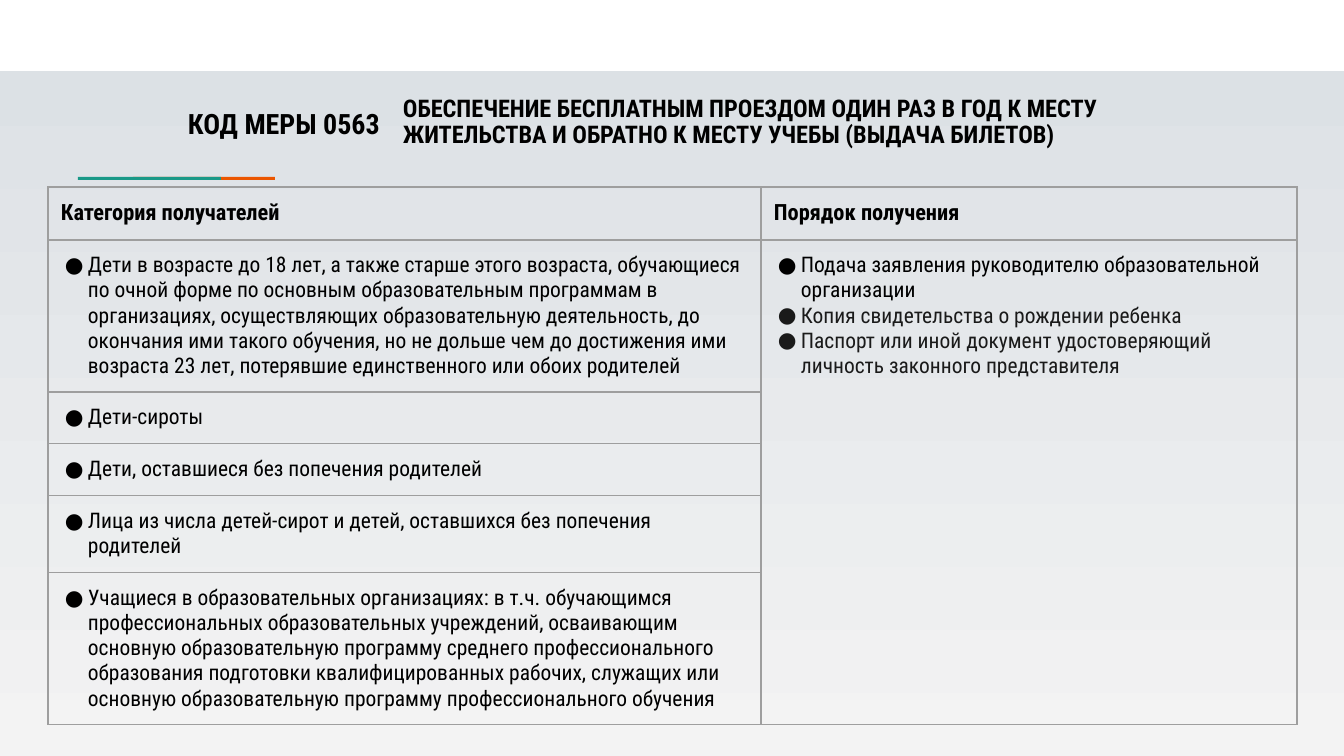
"""Builds a slide on free travel for students: who is entitled and how to apply."""
import pptx
import pptx.dml.color
import pptx.enum.shapes
import pptx.enum.text
import pptx.oxml.ns
import pptx.util
from lxml import etree

TITLE = ("ОБЕСПЕЧЕНИЕ БЕСПЛАТНЫМ ПРОЕЗДОМ ОДИН РАЗ В ГОД К МЕСТУ ЖИТЕЛЬСТВА "
         "И ОБРАТНО К МЕСТУ УЧЕБЫ (ВЫДАЧА БИЛЕТОВ)")
CODE = "КОД МЕРЫ 0563"
HEADERS = ["Категория получателей", "Порядок получения"]
RECIPIENTS = [
    "Дети в возрасте до 18 лет, а также старше этого возраста, обучающиеся по очной форме "
    "по основным образовательным программам в организациях, осуществляющих образовательную "
    "деятельность, до окончания ими такого обучения, но не дольше чем до достижения ими "
    "возраста 23 лет, потерявшие единственного или обоих родителей",
    "Дети-сироты",
    "Дети, оставшиеся без попечения родителей",
    "Лица из числа детей-сирот и детей, оставшихся без попечения родителей",
    "Учащиеся в образовательных организациях: в т.ч. обучающимся профессиональных "
    "образовательных учреждений, осваивающим основную образовательную программу среднего "
    "профессионального образования подготовки квалифицированных рабочих, служащих или "
    "основную образовательную программу профессионального обучения",
]
STEPS = [
    ("Подача заявления руководителю образовательной организации", "black"),
    ("Копия свидетельства о рождении ребенка", "ink"),
    ("Паспорт или иной документ удостоверяющий личность законного представителя", "ink"),
]
COLORS = {"black": "000000", "ink": "1A1A1A", "white": "FFFFFF", "border": "9E9E9E",
          "orange": "EB5600", "teal": "1A9988", "sky": "DADFE4", "mist": "F3F3F3"}
FONT = "Roboto Condensed"
BLOCKS = [((0, 0, 1344, 71), "white"),
          ((133, 177, 142, 3), "orange"),
          ((78, 177, 143, 3), "teal")]
COLUMNS = [713, 536]
ROWS = [53, 152, 52, 52, 77, 152]


def px(length):
    return pptx.util.Emu(round(length * 914400 / 134.4))


def rgb(name):
    return pptx.dml.color.RGBColor.from_string(COLORS[name])


def add_xml(parent, tag, **attributes):
    return etree.SubElement(parent, pptx.oxml.ns.qn(tag), attributes)


def write(paragraph, text, size, bold=False, color="black"):
    paragraph.add_run().text = text
    font = paragraph.font
    font.name, font.size, font.bold = FONT, pptx.util.Pt(size), bold
    font.color.rgb = rgb(color)


def place(shape, left, top, width, height):
    shape.left, shape.top, shape.width, shape.height = map(px, (left, top, width, height))


def set_frame(frame, side, edge):
    frame.word_wrap = True
    frame.auto_size = pptx.enum.text.MSO_AUTO_SIZE.NONE
    frame.vertical_anchor = pptx.enum.text.MSO_ANCHOR.MIDDLE
    frame.margin_left = frame.margin_right = px(side)
    frame.margin_top = frame.margin_bottom = px(edge)


def write_bullets(cell, items):
    frame = cell.text_frame
    for index, (text, color) in enumerate(items):
        paragraph = frame.add_paragraph() if index else frame.paragraphs[0]
        properties = paragraph._p.get_or_add_pPr()
        properties.set("marL", str(px(27)))
        properties.set("indent", str(px(-23)))
        add_xml(add_xml(properties, "a:buClr"), "a:srgbClr", val=COLORS[color])
        add_xml(properties, "a:buFont", typeface=FONT)
        add_xml(properties, "a:buChar", char="●")
        write(paragraph, text, 11.5, color=color)


def style_cell(cell):
    cell.margin_left = cell.margin_right = cell.margin_top = cell.margin_bottom = px(13)
    properties = cell._tc.get_or_add_tcPr()
    for side in ("L", "R", "T", "B"):
        line = add_xml(properties, f"a:ln{side}", w=str(pptx.util.Pt(0.75)))
        add_xml(add_xml(line, "a:solidFill"), "a:srgbClr", val=COLORS["border"])
    cell.fill.background()


def main():
    deck = pptx.Presentation()
    deck.slide_width, deck.slide_height = px(1344), px(756)
    slide = deck.slides.add_slide(deck.slide_layouts[5])

    backdrop = slide.background.fill
    backdrop.gradient()
    backdrop.gradient_angle = 270
    for stop, name, position in zip(backdrop.gradient_stops, ("sky", "mist"), (0, 1)):
        stop.color.rgb, stop.position = rgb(name), position

    for box, color in BLOCKS:
        block = slide.shapes.add_shape(pptx.enum.shapes.MSO_SHAPE.RECTANGLE, *map(px, box))
        block.shadow.inherit = False
        block.fill.solid()
        block.fill.fore_color.rgb = rgb(color)
        block.line.fill.background()

    title = slide.shapes.title
    place(title, 393, 71, 847, 104)
    set_frame(title.text_frame, 10, 5)
    heading = title.text_frame.paragraphs[0]
    heading.alignment = pptx.enum.text.PP_ALIGN.LEFT
    heading.line_spacing = 0.9
    write(heading, TITLE, 13, bold=True)

    code = slide.shapes.add_textbox(*map(px, (110, 71, 283, 104)))
    set_frame(code.text_frame, 13, 13)
    code_line = code.text_frame.paragraphs[0]
    code_line.alignment = pptx.enum.text.PP_ALIGN.RIGHT
    write(code_line, CODE, 15, bold=True)

    measures = slide.shapes.add_table(
        len(ROWS), len(COLUMNS), px(48), px(187), px(sum(COLUMNS)), px(sum(ROWS))).table
    measures.first_row = measures.horz_banding = False
    for column, width in zip(measures.columns, COLUMNS):
        column.width = px(width)
    for row, height in zip(measures.rows, ROWS):
        row.height = px(height)
    for cell in measures.iter_cells():
        style_cell(cell)
    for index, header in enumerate(HEADERS):
        write(measures.cell(0, index).text_frame.paragraphs[0], header, 12, bold=True)
    for index, recipient in enumerate(RECIPIENTS, 1):
        write_bullets(measures.cell(index, 0), [(recipient, "black")])
    procedure = measures.cell(1, 1)
    procedure.merge(measures.cell(len(RECIPIENTS), 1))
    write_bullets(procedure, STEPS)

    deck.save("out.pptx")


if __name__ == "__main__":
    main()
